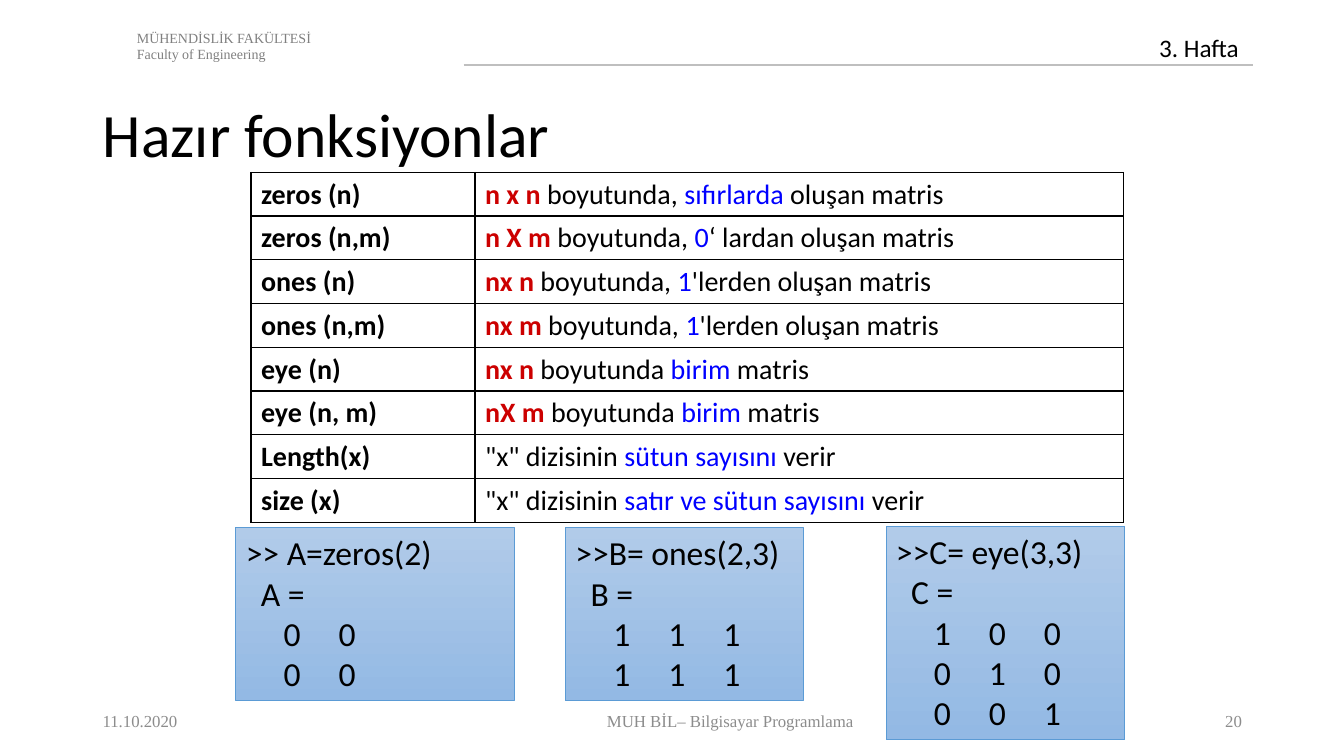
from dataclasses import dataclass

from lxml.etree import SubElement
from pptx import Presentation
from pptx.dml.color import RGBColor
from pptx.enum.shapes import MSO_CONNECTOR, MSO_SHAPE
from pptx.enum.text import MSO_ANCHOR, MSO_AUTO_SIZE, PP_ALIGN
from pptx.oxml.ns import qn
from pptx.util import Pt


@dataclass(frozen=True)
class Theme:
    sans: str = "Calibri"
    serif: str = "Times New Roman"
    ink: str = "000000"
    red: str = "CC0000"
    blue: str = "0000FF"
    grey: str = "808080"
    pale: str = "8C8C8C"
    rule: str = "BFBFBF"
    edge: str = "5B9BD5"
    top: str = "B1CBE9"
    base: str = "93B9E4"
    title: int = 44
    code: int = 24
    cell: int = 20
    week: int = 18
    foot: int = 12
    head: int = 10


def rgb(code):
    return RGBColor.from_string(code)


class Deck:
    def __init__(self, theme):
        self.theme = theme
        self.file = Presentation()
        self.file.slide_width, self.file.slide_height = Pt(960), Pt(540)
        self.slide = self.file.slides.add_slide(self.file.slide_layouts[5])
        self.shapes = self.slide.shapes

    def style(self, para, size, color, face=None, bold=False):
        font = para.font
        font.name, font.size, font.bold = face or self.theme.sans, Pt(size), bold
        font.color.rgb = rgb(color)

    def fill_text(self, frame, lines, size, color, face=None, align=PP_ALIGN.LEFT):
        frame.word_wrap = True
        for i, line in enumerate(lines):
            para = frame.add_paragraph() if i else frame.paragraphs[0]
            para.text = line
            para.alignment = align
            self.style(para, size, color, face)

    def title(self, box, text):
        shape = self.shapes.title
        shape.left, shape.top, shape.width, shape.height = map(Pt, box)
        frame = shape.text_frame
        frame.vertical_anchor = MSO_ANCHOR.TOP
        frame.auto_size = MSO_AUTO_SIZE.NONE
        self.fill_text(frame, [text], self.theme.title, self.theme.ink)
        frame.paragraphs[0].line_spacing = 0.9

    def label(self, box, lines, size, color, face=None,
              align=PP_ALIGN.LEFT, anchor=MSO_ANCHOR.TOP):
        frame = self.shapes.add_textbox(*map(Pt, box)).text_frame
        frame.vertical_anchor = anchor
        self.fill_text(frame, lines, size, color, face, align)

    def rule(self, left, right, y):
        line = self.shapes.add_connector(
            MSO_CONNECTOR.STRAIGHT, Pt(left), Pt(y), Pt(right), Pt(y))
        line.line.color.rgb = rgb(self.theme.rule)
        line.line.width = Pt(1.5)
        SubElement(line._element.spPr, qn("a:effectLst"))

    def code(self, box, lines):
        shape = self.shapes.add_shape(MSO_SHAPE.RECTANGLE, *map(Pt, box))
        shape.shadow.inherit = False
        shape.fill.gradient()
        shape.fill.gradient_angle = 270
        ends = (self.theme.top, self.theme.base)
        for stop, (place, color) in zip(shape.fill.gradient_stops, enumerate(ends)):
            stop.position = place
            stop.color.rgb = rgb(color)
        shape.line.color.rgb = rgb(self.theme.edge)
        shape.line.width = Pt(0.5)
        shape.text_frame.vertical_anchor = MSO_ANCHOR.TOP
        self.fill_text(shape.text_frame, lines, self.theme.code, self.theme.ink)

    def border(self, cell):
        props = cell._tc.get_or_add_tcPr()
        for side in ("lnL", "lnR", "lnT", "lnB"):
            line = SubElement(props, qn(f"a:{side}"), w=str(Pt(1)))
            fill = SubElement(line, qn("a:solidFill"))
            SubElement(fill, qn("a:srgbClr"), val=self.theme.ink)

    def table(self, left, top, widths, height, rows):
        """Each row holds a name, then size, text, key word and ending."""
        grid = self.shapes.add_table(
            len(rows), len(widths), Pt(left), Pt(top),
            Pt(sum(widths)), Pt(height * len(rows))).table
        grid.first_row = grid.horz_banding = False
        for col, width in zip(grid.columns, widths):
            col.width = Pt(width)
        for row, (name, *parts) in zip(grid.rows, rows):
            row.height = Pt(height)
            for cell in row.cells:
                self.border(cell)
                cell.fill.background()
            first, second = (cell.text_frame.paragraphs[0] for cell in row.cells)
            first.text = name
            self.style(first, self.theme.cell, self.theme.ink, bold=True)
            self.style(second, self.theme.cell, self.theme.ink)
            tints = (self.theme.red, None, self.theme.blue, None)
            for text, tint in zip(parts, tints):
                if not text:
                    continue
                run = second.add_run()
                run.text = text
                if tint:
                    run.font.color.rgb = rgb(tint)
                    run.font.bold = tint == self.theme.red


ROWS = [
    ("zeros (n)", "n x n", " boyutunda, ", "sıfırlarda", " oluşan matris"),
    ("zeros (n,m)", "n X m", " boyutunda, ", "0", "‘ lardan oluşan matris"),
    ("ones (n)", "nx n", " boyutunda, ", "1", "'lerden oluşan matris"),
    ("ones (n,m)", "nx m", " boyutunda, ", "1", "'lerden oluşan matris"),
    ("eye (n)", "nx n", " boyutunda ", "birim", " matris"),
    ("eye (n, m)", "nX m", " boyutunda ", "birim", " matris"),
    ("Length(x)", "", '"x" dizisinin ', "sütun sayısını", " verir"),
    ("size (x)", "", '"x" dizisinin ', "satır ve sütun sayısını", " verir"),
]
CODES = [
    ((168.5, 376.6, 198.7, 123.8),
     [">> A=zeros(2)", "  A =", "     0     0", "     0     0"]),
    ((403.9, 376.6, 169.9, 123.8),
     [">>B= ones(2,3)", "  B =", "     1     1     1", "     1     1     1"]),
    ((632.9, 375.8, 170.6, 152.6),
     [">>C= eye(3,3)", "  C =", "     1     0     0", "     0     1     0",
      "     0     0     1"]),
]
FEET = [
    (66.2, 113, "11.10.2020", PP_ALIGN.LEFT),
    (196.6, 650.2, "MUH BİL– Bilgisayar Programlama", PP_ALIGN.CENTER),
    (861.8, 32.4, "20", PP_ALIGN.RIGHT),
]


def main():
    theme = Theme()
    deck = Deck(theme)
    deck.rule(331.2, 895, 46.4)
    deck.label((90.7, 17.3, 480, 31.7),
               ["MÜHENDİSLİK FAKÜLTESİ", "Faculty of Engineering"],
               theme.head, theme.grey, theme.serif)
    deck.label((820.8, 19.4, 72.7, 28.8), ["3. Hafta"], theme.week, theme.ink)
    deck.title((66.2, 70.6, 828, 62.6), "Hazır fonksiyonlar")
    deck.table(179.3, 123.1, (160, 463.5), 31.25, ROWS)
    for box, lines in CODES:
        deck.code(box, lines)
    for left, width, text, align in FEET:
        deck.label((left, 500.4, width, 28.8), [text], theme.foot, theme.pale,
                   theme.serif, align, MSO_ANCHOR.MIDDLE)
    deck.file.save("out.pptx")


if __name__ == "__main__":
    main()
